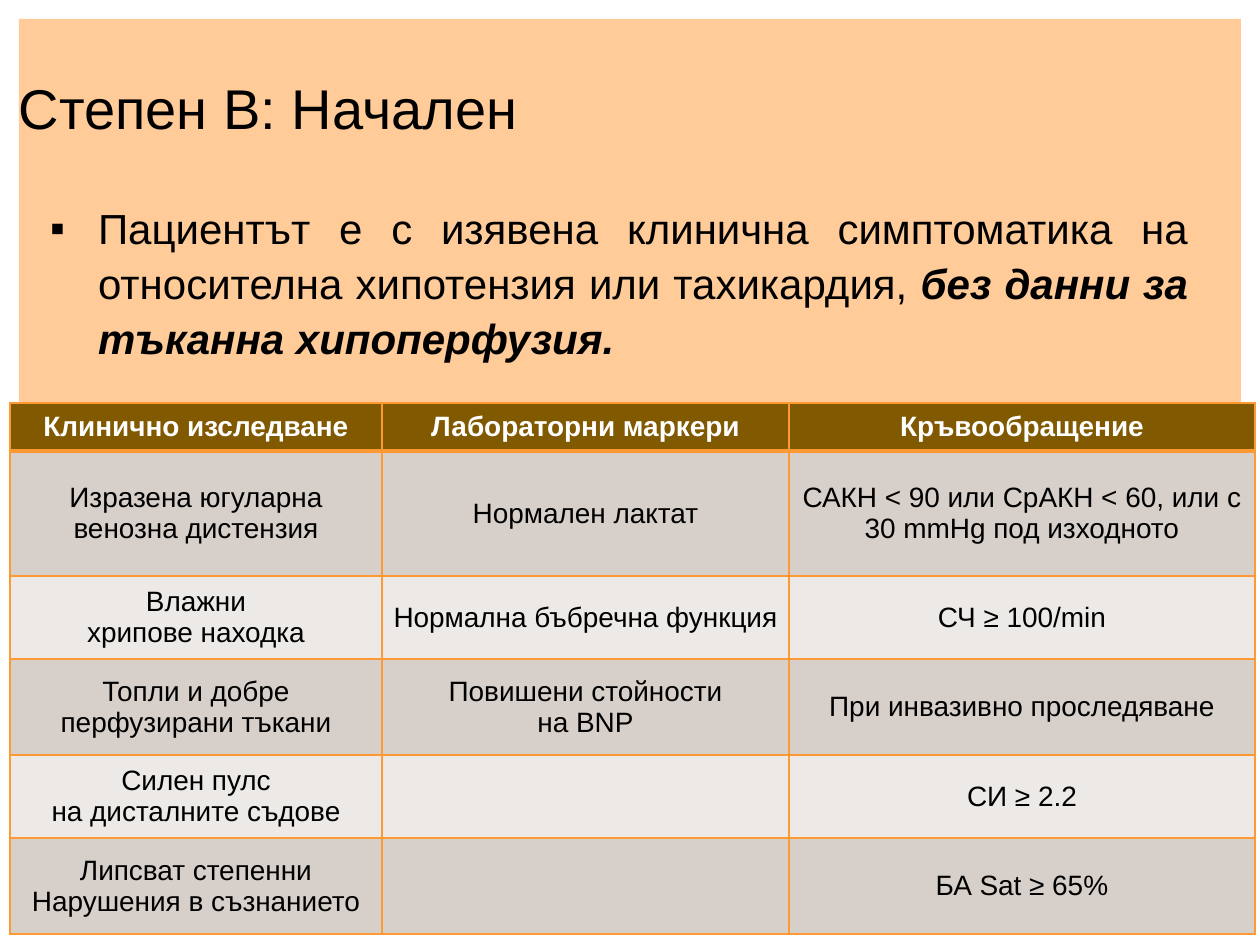
from lxml.etree import SubElement
from pptx import Presentation
from pptx.dml.color import RGBColor
from pptx.enum.shapes import MSO_SHAPE
from pptx.enum.text import MSO_ANCHOR, PP_ALIGN
from pptx.oxml.ns import qn
from pptx.util import Emu, Pt

EMU_PER_PX = 914400 / 126
FONT = "Arial"
COLORS = {
    "orange": "FF9933",
    "header": "805900",
    "dark_band": "D7D0CA",
    "light_band": "ECE9E6",
    "black": "000000",
    "white": "FFFFFF",
}
COLUMN_WIDTHS = [372, 407, 466]
ROW_HEIGHTS = [48, 125, 83, 96, 83, 96]
ROWS = [
    ["Клинично изследване", "Лабораторни маркери", "Кръвообращение"],
    ["Изразена югуларна\nвенозна дистензия", "Нормален лактат",
     "САКН < 90 или СрАКН < 60, или с 30 mmHg под изходното"],
    ["Влажни\nхрипове находка", "Нормална бъбречна функция", "СЧ ≥ 100/min"],
    ["Топли и добре\nперфузирани тъкани", "Повишени стойности\nна BNP",
     "При инвазивно проследяване"],
    ["Силен пулс\nна дисталните съдове", "", "СИ ≥ 2.2"],
    ["Липсват степенни\nНарушения в съзнанието", "", "БА Sat ≥ 65%"],
]


def px(value):
    return Emu(round(value * EMU_PER_PX))


def color(name):
    return RGBColor.from_string(COLORS[name])


def format_font(font, size, color_name, bold=False, italic=False):
    font.name = FONT
    font.size = Pt(size)
    font.bold = bold
    font.italic = italic
    font.color.rgb = color(color_name)


def set_margins(target, margin):
    target.margin_left = target.margin_right = px(margin)
    target.margin_top = target.margin_bottom = px(margin)


def add_panel(slide, left, top, width, height):
    panel = slide.shapes.add_shape(
        MSO_SHAPE.RECTANGLE, px(left), px(top), px(width), px(height))
    panel.shadow.inherit = False
    panel.fill.solid()
    panel.fill.fore_color.rgb = color("orange")
    panel.line.fill.background()
    # Half transparent fill
    color_element = panel._element.spPr.find(qn("a:solidFill"))[0]
    SubElement(color_element, qn("a:alpha"), val="50000")


def add_text_box(slide, left, top, width, height, anchor):
    box = slide.shapes.add_textbox(px(left), px(top), px(width), px(height))
    text_frame = box.text_frame
    text_frame.word_wrap = True
    text_frame.vertical_anchor = anchor
    set_margins(text_frame, 6)
    return text_frame


def add_title(slide, text):
    text_frame = add_text_box(slide, 13, 16, 1232, 183, MSO_ANCHOR.MIDDLE)
    text_frame.text = text
    format_font(text_frame.paragraphs[0].runs[0].font, 32, "black")


def add_bullet(paragraph, character, indent):
    properties = paragraph._p.get_or_add_pPr()
    properties.set("marL", str(px(indent)))
    properties.set("indent", str(-px(indent)))
    bullet_color = SubElement(properties, qn("a:buClr"))
    SubElement(bullet_color, qn("a:srgbClr"), val=COLORS["black"])
    SubElement(properties, qn("a:buFont"), typeface=FONT)
    SubElement(properties, qn("a:buChar"), char=character)


def add_body(slide, plain_text, emphasis):
    text_frame = add_text_box(slide, 44, 192, 1150, 430, MSO_ANCHOR.TOP)
    paragraph = text_frame.paragraphs[0]
    add_bullet(paragraph, "▪", 48)
    paragraph.alignment = PP_ALIGN.JUSTIFY
    paragraph.line_spacing = 1.09
    for text, strong in ((plain_text, False), (emphasis, True)):
        run = paragraph.add_run()
        run.text = text
        format_font(run.font, 24, "black", bold=strong, italic=strong)


def set_borders(cell, top, bottom):
    properties = cell._tc.get_or_add_tcPr()
    sides = (("a:lnL", 1), ("a:lnR", 1), ("a:lnT", top), ("a:lnB", bottom))
    # Borders come before the fill in the cell properties
    for position, (tag, width) in enumerate(sides):
        line = SubElement(properties, qn(tag), w=str(Pt(width)))
        fill = SubElement(line, qn("a:solidFill"))
        SubElement(fill, qn("a:srgbClr"), val=COLORS["orange"])
        properties.insert(position, line)


def fill_cell(cell, text, row_index):
    is_header = row_index == 0
    band = "dark_band" if row_index % 2 else "light_band"
    cell.fill.solid()
    cell.fill.fore_color.rgb = color("header" if is_header else band)
    cell.vertical_anchor = MSO_ANCHOR.MIDDLE
    set_margins(cell, 0)
    set_borders(cell, top=3 if row_index == 1 else 1,
                bottom=3 if is_header else 1)
    cell.text_frame.text = text
    for paragraph in cell.text_frame.paragraphs:
        paragraph.alignment = PP_ALIGN.CENTER
        for run in paragraph.runs:
            format_font(run.font, 16, "white" if is_header else "black",
                        bold=is_header)


def add_criteria_table(slide, left, top):
    table = slide.shapes.add_table(
        len(ROWS), len(COLUMN_WIDTHS), px(left), px(top),
        px(sum(COLUMN_WIDTHS)), px(sum(ROW_HEIGHTS))).table
    for column, width in zip(table.columns, COLUMN_WIDTHS):
        column.width = px(width)
    for row_index, (row, height) in enumerate(zip(table.rows, ROW_HEIGHTS)):
        row.height = px(height)
        for cell, text in zip(row.cells, ROWS[row_index]):
            fill_cell(cell, text, row_index)


def main():
    presentation = Presentation()
    presentation.slide_width = px(1260)
    presentation.slide_height = px(945)
    slide = presentation.slides.add_slide(presentation.slide_layouts[6])

    # Background panel
    add_panel(slide, 19, 19, 1222, 907)
    # Heading and definition
    add_title(slide, "Степен B: Начален")
    add_body(
        slide,
        "Пациентът е с изявена клинична симптоматика на относителна "
        "хипотензия или тахикардия, ",
        "без данни за тъканна хипоперфузия.")
    # Criteria
    add_criteria_table(slide, 10, 403)

    presentation.save("out.pptx")


if __name__ == "__main__":
    main()
